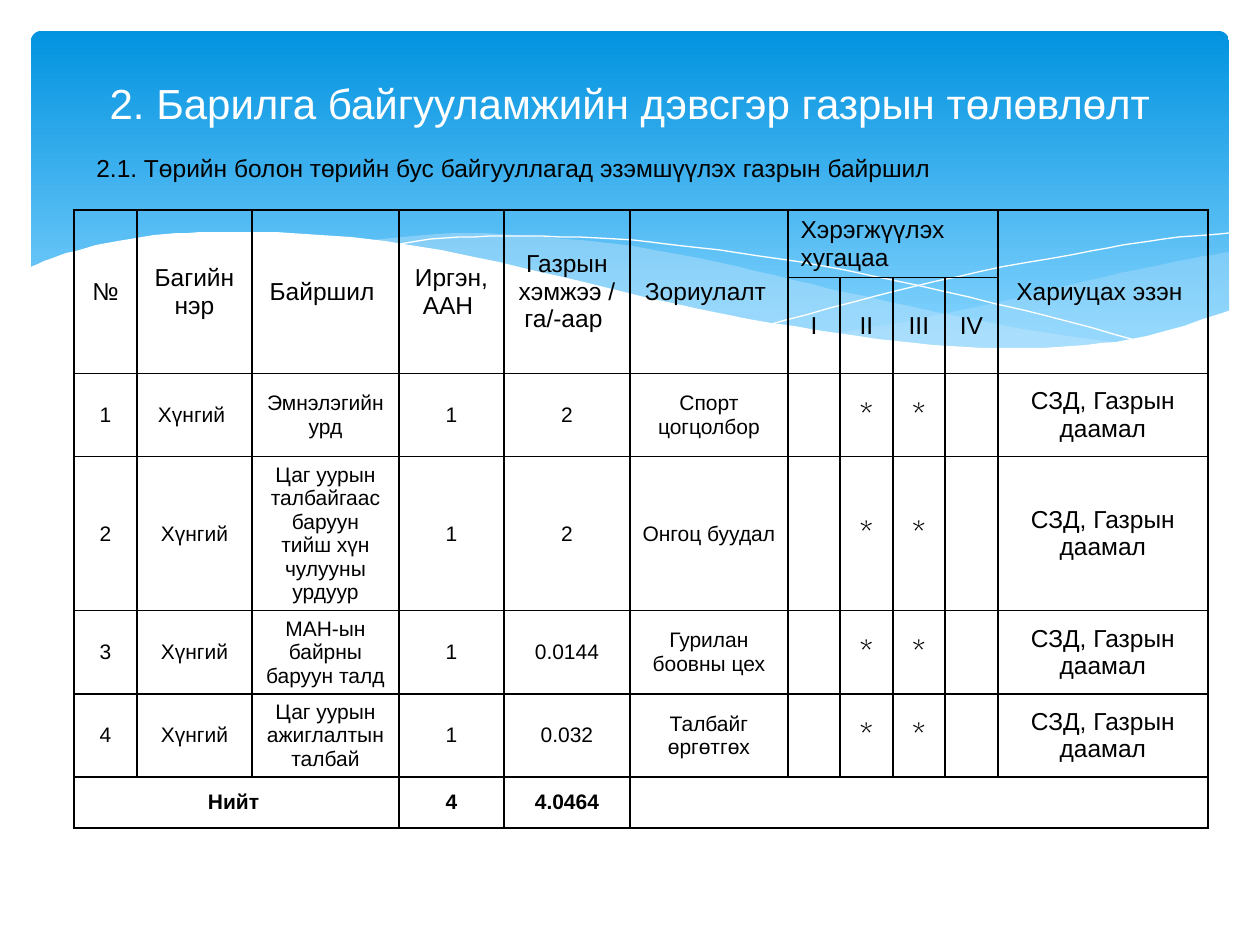
import itertools

import lxml.etree
import pptx
import pptx.dml.color
import pptx.enum.shapes
import pptx.enum.text
import pptx.oxml.ns
import pptx.util

EMU_PER_PX = 914400 / 126
COLORS = {"sky": "0293E0", "pale": "83D3FE", "mist": "C6E7FC", "white": "FFFFFF", "black": "000000"}
CENTER = pptx.enum.text.PP_ALIGN.CENTER
LEFT = pptx.enum.text.PP_ALIGN.LEFT
MIDDLE = pptx.enum.text.MSO_ANCHOR.MIDDLE
TOP = pptx.enum.text.MSO_ANCHOR.TOP

RIGHT_WAVE = [
    [(1229, 252), (1178, 261), (1104, 277), (1014, 299), (919, 319), (833, 334)],
    [(833, 334), (888, 341), (954, 348), (1026, 350), (1099, 345), (1160, 334), (1230, 311)],
]
LONG_WAVE = [
    [(1125, 344), (1017, 328), (890, 302), (793, 280), (699, 258), (616, 244), (529, 236),
     (455, 233), (360, 241)],
    [(360, 241), (431, 251), (509, 266), (619, 292), (736, 318), (838, 335), (927, 347),
     (1017, 350), (1080, 349), (1125, 344)],
]
FALLING_LINE = [[(389, 246), (445, 238), (524, 236), (616, 239), (701, 248), (801, 262),
                 (916, 285), (1047, 316), (1143, 343)]]
RISING_LINE = [[(772, 324), (876, 296), (978, 272), (1091, 251), (1164, 239), (1229, 233)]]
WHITE_WAVE = [
    [(1231, 310), (1147, 336), (1071, 346), (999, 348), (915, 343), (816, 330), (699, 309),
     (563, 277), (460, 254), (368, 239), (290, 233), (223, 232), (166, 234), (107, 243),
     (58, 256), (29, 268)],
    [(29, 414), (1231, 414)],
]

COLUMN_WIDTHS = [63, 115, 147, 105, 126, 158, 52, 53, 52, 53, 210]
ROW_HEIGHTS = [67, 96, 83, 154, 83, 83, 51]
HEADINGS = ["№", "Багийн нэр", "Байршил ", "Иргэн, ААН ", "Газрын хэмжээ /га/-аар ",
            "Зориулалт ", "Хэрэгжүүлэх хугацаа", "", "", "", "Хариуцах эзэн "]
QUARTERS = ["I", "II", "III", "IV"]
SITES = [
    ("Хүнгий ", "Эмнэлэгийн урд", "2", "Спорт цогцолбор"),
    ("Хүнгий", "Цаг уурын талбайгаас баруун тийш хүн чулууны урдуур", "2", "Онгоц буудал "),
    ("Хүнгий", "МАН-ын байрны баруун талд", "0.0144", "Гурилан боовны цех"),
    ("Хүнгий", "Цаг уурын ажиглалтын талбай", "0.032", "Талбайг өргөтгөх"),
]


def px(length):
    """Turn a length in px into EMU."""
    return pptx.util.Emu(round(length * EMU_PER_PX))


def rgb(name):
    """Look up a named colour."""
    return pptx.dml.color.RGBColor.from_string(COLORS[name])


def write(frame, text, size, color="black", font="Arial", bold=False, align=CENTER):
    """Put one formatted paragraph into a text frame."""
    frame.text = text
    para = frame.paragraphs[0]
    para.alignment = align
    for span in para.runs:
        span.font.name = font
        span.font.size = pptx.util.Pt(size)
        span.font.bold = bold
        span.font.color.rgb = rgb(color)


def smooth(knots, steps=5):
    """Return points on a Catmull-Rom curve through the knots."""
    padded = [knots[0], *knots, knots[-1]]
    points = [knots[0]]
    for a, b, c, d in zip(padded, padded[1:], padded[2:], padded[3:]):
        for step in range(1, steps + 1):
            t = step / steps
            points.append(tuple(
                (2 * q + (r - p) * t + (2 * p - 5 * q + 4 * r - s) * t ** 2
                 + (3 * q - p - 3 * r + s) * t ** 3) / 2
                for p, q, r, s in zip(a, b, c, d)))
    return points


def add_curve(page, box, curves, closed=True):
    """Draw smoothed curves as one unshadowed freeform."""
    points = list(itertools.chain.from_iterable(smooth(curve) for curve in curves))
    builder = page.shapes.build_freeform(*points[0], scale=EMU_PER_PX)
    builder.add_line_segments(points[1:], close=closed)
    shape = builder.convert_to_shape(px(box[0]), px(box[1]))
    shape.shadow.inherit = False
    return shape


def add_wave(page, box, curves, color, opacity=100):
    """Draw a filled wave with the given opacity in percent."""
    wave = add_curve(page, box, curves)
    wave.line.fill.background()
    wave.fill.solid()
    wave.fill.fore_color.rgb = rgb(color)
    if opacity < 100:
        tint = wave.element.spPr.xpath("./a:solidFill/a:srgbClr")[0]
        alpha = lxml.etree.SubElement(tint, pptx.oxml.ns.qn("a:alpha"))
        alpha.set("val", str(opacity * 1000))


def add_backdrop(page, box):
    """Draw the blue panel with its waves and thin lines."""
    left, top, width, _ = box
    panel = page.shapes.add_shape(pptx.enum.shapes.MSO_SHAPE.ROUNDED_RECTANGLE,
                                  px(left + 31), px(top + 31), px(width - 62), px(340))
    panel.adjustments[0] = 0.03
    panel.shadow.inherit = False
    panel.line.fill.background()
    panel.fill.gradient()
    panel.fill.gradient_angle = 270
    for stop, color, position in zip(panel.fill.gradient_stops, ("sky", "pale"), (0, 0.9)):
        stop.color.rgb = rgb(color)
        stop.position = position
    add_wave(page, box, RIGHT_WAVE, "mist", 29)
    add_wave(page, box, LONG_WAVE, "mist", 40)
    for curves in (FALLING_LINE, RISING_LINE):
        line = add_curve(page, box, curves, closed=False)
        line.fill.background()
        line.line.color.rgb = rgb("white")
        line.line.width = 0
    add_wave(page, box, WHITE_WAVE, "white")


def add_headings(page, box):
    """Place the title and the subtitle below it."""
    left, top, width, _ = box
    title = page.shapes.title
    title.element.getparent().append(title.element)
    title.left, title.top, title.width, title.height = px(left), px(top), px(width), px(88)
    title.text_frame.vertical_anchor = MIDDLE
    write(title.text_frame, "2. Барилга байгууламжийн дэвсгэр газрын төлөвлөлт", 24, "white")
    subtitle = page.shapes.add_textbox(px(left + 21), px(top + 77), px(width), px(63))
    subtitle.text_frame.word_wrap = True
    subtitle.text_frame.vertical_anchor = MIDDLE
    write(subtitle.text_frame,
          "2.1. Төрийн болон төрийн бус байгууллагад эзэмшүүлэх газрын байршил", 14, align=LEFT)


def style_cell(cell):
    """Give a cell black borders and no fill."""
    properties = cell._tc.get_or_add_tcPr()
    for side in ("lnL", "lnR", "lnT", "lnB"):
        border = lxml.etree.SubElement(properties, pptx.oxml.ns.qn("a:" + side), w="12700")
        fill = lxml.etree.SubElement(border, pptx.oxml.ns.qn("a:solidFill"))
        lxml.etree.SubElement(fill, pptx.oxml.ns.qn("a:srgbClr"), val=COLORS["black"])
    cell.fill.background()
    cell.vertical_anchor = MIDDLE


def add_site_table(page, box):
    """Build the table of land sites with merged headings and a total row."""
    rows = [HEADINGS, [""] * 6 + QUARTERS + [""]]
    for number, (district, place, area, purpose) in enumerate(SITES, 1):
        rows.append([str(number), district, place, "1", area, purpose,
                     "", "*", "*", "", "СЗД, Газрын даамал"])
    rows.append(["Нийт ", "", "", "4", "4.0464"] + [""] * 6)
    table = page.shapes.add_table(len(rows), len(COLUMN_WIDTHS), *map(px, box)).table
    table.first_row = table.horz_banding = False
    for column, width in zip(table.columns, COLUMN_WIDTHS):
        column.width = px(width)
    for row, height in zip(table.rows, ROW_HEIGHTS):
        row.height = px(height)
    last_row, last_column = len(rows) - 1, len(COLUMN_WIDTHS) - 1
    for r, texts in enumerate(rows):
        for c, text in enumerate(texts):
            cell = table.cell(r, c)
            style_cell(cell)
            if text == "*":
                write(cell.text_frame, text, 18, font="Cabin")
            elif text:
                size = 14 if r < 2 or c == last_column else 12
                write(cell.text_frame, text, size, bold=r == last_row)
    period = table.cell(0, 6)
    period.vertical_anchor = TOP
    period.text_frame.paragraphs[0].alignment = LEFT
    period.merge(table.cell(0, 9))
    for c in [*range(6), last_column]:
        table.cell(0, c).merge(table.cell(1, c))
    table.cell(last_row, 0).merge(table.cell(last_row, 2))
    table.cell(last_row, 5).merge(table.cell(last_row, last_column))


def main():
    """Build and save the deck."""
    deck = pptx.Presentation()
    deck.slide_width, deck.slide_height = px(1260), px(945)
    page = deck.slides.add_slide(deck.slide_layouts[5])
    add_backdrop(page, (0, 0, 1260, 945))
    add_site_table(page, (74, 210, sum(COLUMN_WIDTHS), sum(ROW_HEIGHTS)))
    add_headings(page, (63, 59, 1134, 88))
    deck.save("out.pptx")


if __name__ == "__main__":
    main()
